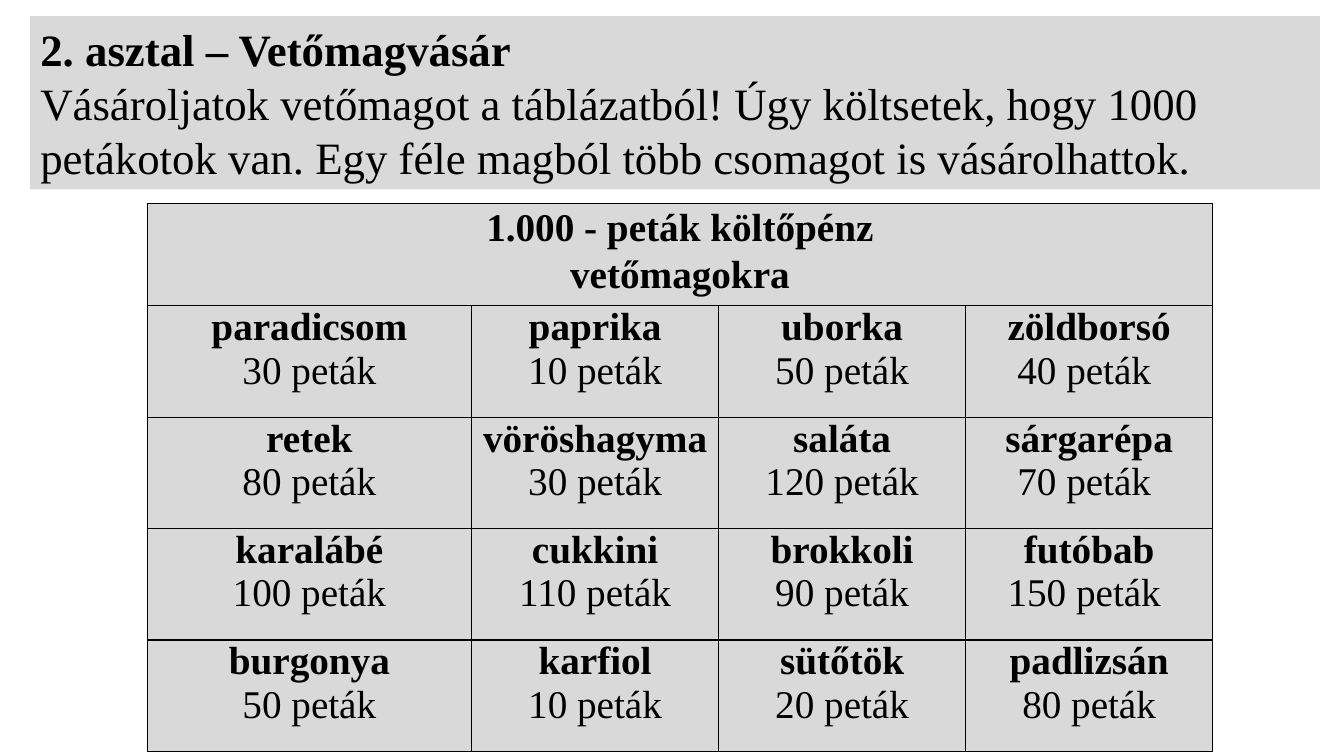
from lxml import etree
from pptx import Presentation
from pptx.dml.color import RGBColor
from pptx.enum.text import MSO_ANCHOR, MSO_AUTO_SIZE, PP_ALIGN
from pptx.oxml.ns import qn
from pptx.util import Inches, Pt

LEFT, MID = PP_ALIGN.LEFT, PP_ALIGN.CENTER
TOP, CENTER = MSO_ANCHOR.TOP, MSO_ANCHOR.MIDDLE
FIXED = MSO_AUTO_SIZE.NONE
GREY = RGBColor(0xD9, 0xD9, 0xD9)
BLACK = RGBColor(0, 0, 0)
TITLE_ONLY = 5
HARD = chr(160)  # no-break space that nudges some prices to the left

HEAD = "1.000 - peták költőpénz", "vetőmagokra"
SEEDS = [
    [("paradicsom", 30), ("paprika", 10), ("uborka", 50), ("zöldborsó", 40)],
    [("retek", 80), ("vöröshagyma", 30), ("saláta", 120), ("sárgarépa", 70)],
    [("karalábé", 100), ("cukkini", 110), ("brokkoli", 90), ("futóbab", 150)],
    [("burgonya", 50), ("karfiol", 10), ("sütőtök", 20), ("padlizsán", 80)],
]
NUDGED = {"zöldborsó", "sárgarépa", "futóbab"}


class Sheet:
    """One slide on a grid of 100 columns by 100 rows."""
    font = "Times New Roman"

    def __init__(self, deck):
        self.slide = deck.slides.add_slide(deck.slide_layouts[TITLE_ONLY])
        self.col = deck.slide_width / 100
        self.row = deck.slide_height / 100

    def x(self, cols):
        return round(cols * self.col)

    def y(self, rows):
        return round(rows * self.row)

    def text(self, frame, lines, size, align, lead=1.0):
        """Put (words, bold) lines in a frame, one paragraph each."""
        for i, (words, bold) in enumerate(lines):
            para = frame.add_paragraph() if i else frame.paragraphs[0]
            para.alignment = align
            para.line_spacing = lead
            run = para.add_run()
            run.text = words
            run.font.name = self.font
            run.font.size = Pt(size)
            run.font.bold = bold
            run.font.color.rgb = BLACK

    def title(self, box, lines):
        shape = self.slide.shapes.title
        left, top, width, height = box
        shape.left, shape.top = self.x(left), self.y(top)
        shape.width, shape.height = self.x(width), self.y(height)
        shape.fill.solid()
        shape.fill.fore_color.rgb = GREY
        frame = shape.text_frame
        frame.word_wrap = True
        frame.auto_size = FIXED
        frame.vertical_anchor = CENTER
        self.text(frame, lines, 32, LEFT)

    def table(self, left, top, widths, heights):
        grid = self.slide.shapes.add_table(
            len(heights), len(widths), self.x(left), self.y(top),
            self.x(sum(widths)), self.y(sum(heights))).table
        grid.first_row = grid.horz_banding = False
        for col, width in zip(grid.columns, widths):
            col.width = self.x(width)
        for row, height in zip(grid.rows, heights):
            row.height = self.y(height)
        for cell in grid.iter_cells():
            self.style(cell)
        return grid

    def style(self, cell):
        cell.fill.solid()
        cell.fill.fore_color.rgb = GREY
        cell.vertical_anchor = TOP
        cell.margin_left = cell.margin_right = Inches(0.06)
        cell.margin_top = cell.margin_bottom = 0
        props = cell._tc.get_or_add_tcPr()
        for i, side in enumerate("LRTB"):
            line = etree.Element(qn(f"a:ln{side}"), w=str(Pt(1)))
            fill = etree.SubElement(line, qn("a:solidFill"))
            etree.SubElement(fill, qn("a:srgbClr"), val=str(BLACK))
            props.insert(i, line)


def main():
    deck = Presentation()
    deck.slide_width, deck.slide_height = Inches(13.33), Inches(7.5)
    sheet = Sheet(deck)

    # Task
    sheet.title((2.25, 2.13, 95.95, 22.93), [
        ("2. asztal – Vetőmagvásár", True),
        ("Vásároljatok vetőmagot a táblázatból! Úgy költsetek, hogy 1000 "
         "petákotok van. Egy féle magból több csomagot is vásárolhattok.",
         False)])

    # Price list
    grid = sheet.table(10.95, 26.95, [24.14] + [18.38] * 3,
                       [13.5] + [14.74] * 4)
    grid.cell(0, 0).merge(grid.cell(0, 3))
    sheet.text(grid.cell(0, 0).text_frame,
               [(words, True) for words in HEAD], 28, MID, 1.07)
    for r, seeds in enumerate(SEEDS, 1):
        for c, (name, price) in enumerate(seeds):
            tail = HARD if name in NUDGED else ""
            sheet.text(grid.cell(r, c).text_frame,
                       [(name, True), (f"{price} peták{tail}", False)],
                       28, MID)

    deck.save("out.pptx")


if __name__ == "__main__":
    main()
